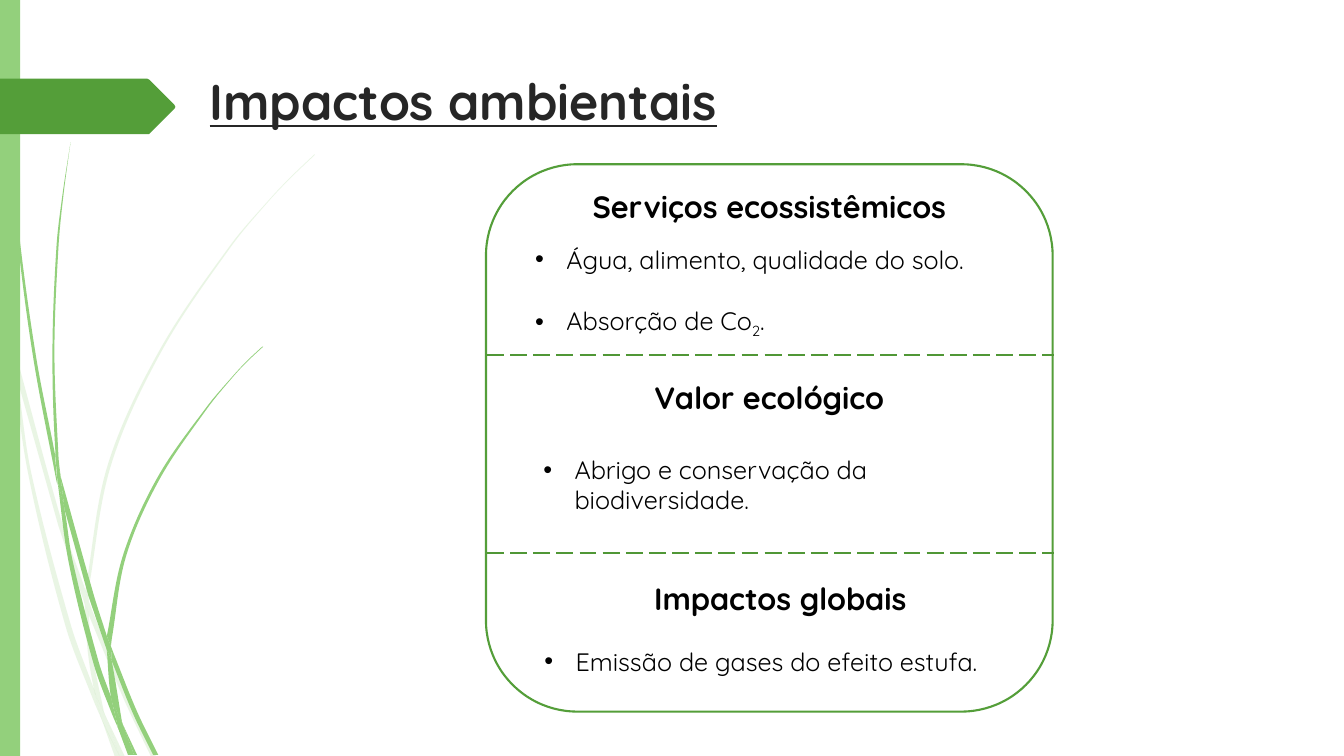
from dataclasses import dataclass
from math import dist

from lxml import etree
from pptx import Presentation, util as u
from pptx.dml.color import RGBColor
from pptx.enum import dml, shapes, text
from pptx.oxml.ns import qn


@dataclass(frozen=True)
class Theme:
    """Colours, font and type sizes of the slide."""
    font: str = "Quicksand"
    leaf: str = "93D07C"
    banner: str = "549E39"
    divider: str = "509736"
    title_ink: str = "262626"
    ink: str = "000000"
    title: int = 36
    heading: int = 22
    body: int = 18
    line: float = 1.5
    pale: int = 20


PALE_BLADES = [
    ([(0.11, 3.5), (0.09, 3.22), (0, 2.82)], [(0, 2.99), (0.1, 3.44)]),
    ([(0.58, 5.22), (0.84, 5.99)], [(0.85, 5.86), (0.62, 5.2), (0.14, 3.45)],
     [(0.17, 3.76), (0.58, 5.22)]),
    ([(0.92, 6.07), (0.88, 5.96)], [(0.88, 6.1), (1.23, 6.94), (1.5, 7.51)],
     [(1.55, 7.51), (1.27, 6.92), (0.92, 6.07)]),
    ([(1.19, 7.51), (1.24, 7.51)], [(1.05, 7.11)]),
    ([(0.93, 6.83), (0.7, 6.19), (0.31, 4.69), (0.17, 3.76), (0.11, 3.5)],
     [(0.11, 3.5), (0.28, 4.7), (0.65, 6.21), (0.92, 6.93), (1.01, 7.14)],
     [(0.99, 7.07), (0.93, 6.83)]),
    ([(0.84, 5.99), (0.87, 6.46), (0.93, 6.83), (0.96, 6.92), (1.05, 7.11)],
     [(1.03, 7.06), (0.91, 6.46), (0.88, 6.1), (0.88, 6.08)]),
    ([(0.88, 5.84), (1.1, 4.62), (1.6, 3.49), (2.29, 2.45), (2.68, 1.98),
      (2.9, 1.75), (3.12, 1.54)],
     [(3.12, 1.53), (2.89, 1.75), (2.68, 1.97), (2.28, 2.44), (1.58, 3.48),
      (1.07, 4.61), (0.85, 5.84), (0.85, 5.86)], [(0.88, 5.96)]),
    ([(1.01, 7.14), (1.14, 7.51)], [(1.19, 7.51)]),
    ([(0.88, 6.08), (0.88, 6.1)], [(0.88, 5.96), (0.85, 5.86)],
     [(0.84, 5.99)]),
    ([(0.96, 6.92), (0.93, 6.83)], [(0.99, 7.07), (1.01, 7.14), (1.19, 7.51)],
     [(1.19, 7.51), (1.05, 7.11)]),
]
BLADES = [
    ([(0.07, 1.1), (0.17, 2.33), (0.33, 3.55), (0.56, 4.77), (0.57, 4.81)],
     [(0.55, 4.57), (0.55, 4.53), (0.36, 3.55), (0.19, 2.32), (0.08, 1.09),
      (0.05, 0.48), (0.04, 0)], [(0.03, 0), (0.04, 0.48), (0.07, 1.1)]),
    ([(0.88, 5.92), (1.06, 6.45)], [(1.06, 6.31), (0.93, 5.9), (0.6, 4.72)],
     [(0.64, 5.05), (0.88, 5.92)]),
    ([(1.13, 6.49), (1.1, 6.41)], [(1.11, 6.56), (1.32, 7.08), (1.52, 7.49)],
     [(1.57, 7.49), (1.36, 7.06), (1.13, 6.49)]),
    ([(1.1, 6.91), (0.98, 6.57), (0.72, 5.56), (0.64, 5.05), (0.57, 4.77)],
     [(0.57, 4.77), (0.68, 5.57), (0.93, 6.59), (1.11, 7.08), (1.17, 7.22)],
     [(1.16, 7.17), (1.1, 6.91)]),
    ([(0.6, 4.72), (0.58, 4.53), (0.54, 3.49), (0.58, 2.45), (0.63, 1.93),
      (0.7, 1.41)],
     [(0.7, 1.41), (0.62, 1.93), (0.56, 2.45), (0.52, 3.49), (0.55, 4.49),
      (0.6, 4.72)]),
    ([(1.33, 7.49), (1.36, 7.49)], [(1.22, 7.19)]),
    ([(0.57, 4.77), (0.64, 5.05)], [(0.6, 4.72), (0.55, 4.49)],
     [(0.55, 4.53)]),
    ([(1.11, 6.33), (1.25, 5.52), (1.58, 4.76), (2.05, 4.06), (2.31, 3.74),
      (2.45, 3.59), (2.61, 3.44)],
     [(2.6, 3.44), (2.45, 3.58), (2.31, 3.73), (2.04, 4.05), (1.56, 4.74),
      (1.22, 5.51), (1.06, 6.31)], [(1.1, 6.41)]),
    ([(1.17, 7.22), (1.27, 7.49)], [(1.31, 7.49)]),
    ([(1.06, 6.45), (1.1, 6.91), (1.16, 7.06), (1.22, 7.19)],
     [(1.21, 7.16), (1.11, 6.56), (1.09, 6.51)]),
    ([(1.06, 6.45), (1.09, 6.51), (1.11, 6.56)], [(1.1, 6.41), (1.06, 6.31)]),
    ([(1.16, 7.06), (1.1, 6.91)], [(1.16, 7.17), (1.17, 7.22), (1.3, 7.49)],
     [(1.33, 7.49), (1.22, 7.19), (1.16, 7.06)]),
]
BANNER = [(0, 0.78), (1.46, 0.78), (1.48, 0.79), (1.73, 1.04), (1.74, 1.06),
          (1.73, 1.08), (1.48, 1.33), (1.46, 1.33), (0, 1.33)]


def handle(before, anchor, after, length):
    """Return the curve handle leaving an anchor along its tangent."""
    span = dist(before, after) or 1
    return [a + (q - p) / span * length / 3
            for p, a, q in zip(before, anchor, after)]


class Page:
    """Draws styled elements on one slide."""

    def __init__(self, slide, theme):
        self.shapes = slide.shapes
        self.theme = theme

    def paint(self, shape, fill=None, line=None):
        """Set fill and outline and drop the shadow."""
        shape.shadow.inherit = False
        if fill:
            shape.fill.solid()
            shape.fill.fore_color.rgb = RGBColor.from_string(fill)
        else:
            shape.fill.background()
        if line:
            shape.line.color.rgb = RGBColor.from_string(line)
            shape.line.width = u.Pt(self.theme.line)
        else:
            shape.line.fill.background()

    def polygon(self, points, fill):
        """Draw a filled outline through the points."""
        corners = [(u.Inches(x), u.Inches(y)) for x, y in points]
        builder = self.shapes.build_freeform(*corners[0], scale=1.0)
        builder.add_line_segments(corners[1:], close=True)
        shape = builder.convert_to_shape()
        self.paint(shape, fill)
        return shape

    def blade(self, edges, pale):
        """Draw a piece of grass whose edges bend smoothly."""
        shape = self.polygon(sum(edges, []), self.theme.leaf)
        steps = iter(list(shape._element.iter(qn("a:lnTo"))))
        for number, edge in enumerate(edges):
            if number:
                next(steps)
            ends = [edge[0], *edge, edge[-1]]
            for a, b, c, d in zip(ends, ends[1:], ends[2:], ends[3:]):
                step, length = next(steps), dist(b, c)
                step.tag = qn("a:cubicBezTo")
                handles = handle(a, b, c, length), handle(d, c, b, length)
                for place, (x, y) in enumerate(handles):
                    step.insert(place, step.makeelement(qn("a:pt"), {
                        "x": str(u.Inches(x) - shape.left),
                        "y": str(u.Inches(y) - shape.top)}))
        if pale:
            color = next(shape._element.spPr.iter(qn("a:srgbClr")))
            etree.SubElement(color, qn("a:alpha"), val=f"{self.theme.pale}000")

    def shape(self, kind, area, fill=None, line=None):
        """Draw a preset shape."""
        shape = self.shapes.add_shape(kind, *map(u.Inches, area))
        self.paint(shape, fill, line)
        return shape

    def divider(self, left, right, y):
        """Draw a dashed horizontal line."""
        line = self.shapes.add_connector(
            shapes.MSO_CONNECTOR.STRAIGHT, *map(u.Inches, (left, y, right, y)))
        line.line.color.rgb = RGBColor.from_string(self.theme.divider)
        line.line.width = u.Pt(self.theme.line)
        line.line.dash_style = dml.MSO_LINE.LONG_DASH
        etree.SubElement(line._element.spPr, qn("a:effectLst"))

    def span(self, para, words, size, color=None, bold=False):
        """Add one run to a paragraph."""
        font = para.add_run().font
        para.runs[-1].text = words
        font.name, font.size, font.bold = self.theme.font, u.Pt(size), bold
        font.color.rgb = RGBColor.from_string(color or self.theme.ink)
        return font

    def box(self, area):
        """Add a wrapping text box and return its frame."""
        frame = self.shapes.add_textbox(*map(u.Inches, area)).text_frame
        frame.word_wrap = True
        return frame

    def title(self, words, area):
        """Write the underlined title."""
        self.span(self.box(area).paragraphs[0], words, self.theme.title,
                  self.theme.title_ink, True).underline = True

    def heading(self, words, area):
        """Write a centred section heading."""
        frame = self.shape(shapes.MSO_SHAPE.ROUNDED_RECTANGLE, area).text_frame
        frame.vertical_anchor = text.MSO_ANCHOR.MIDDLE
        para = frame.paragraphs[0]
        para.alignment = text.PP_ALIGN.CENTER
        self.span(para, words, self.theme.heading, bold=True)

    def bullets(self, items, area):
        """Write bulleted items; every second part is a subscript."""
        frame = self.box(area)
        for index, item in enumerate(items):
            para = frame.add_paragraph() if index else frame.paragraphs[0]
            para.space_before = u.Pt(22 if index else 0)
            props = para._p.get_or_add_pPr()
            props.set("marL", str(u.Inches(0.31)))
            props.set("indent", str(u.Inches(-0.31)))
            etree.SubElement(props, qn("a:buFont"), typeface="Arial")
            etree.SubElement(props, qn("a:buChar"), char="•")
            for part, words in enumerate(item):
                font = self.span(para, words, self.theme.body)
                if part % 2:
                    font._element.set("baseline", "-25000")


def main():
    """Build and save the slide."""
    theme = Theme()
    deck = Presentation()
    deck.slide_width, deck.slide_height = u.Inches(13.33), u.Inches(7.5)
    page = Page(deck.slides.add_slide(deck.slide_layouts[6]), theme)
    for blades, pale in ((PALE_BLADES, True), (BLADES, False)):
        for edges in blades:
            page.blade(edges, pale)
    page.shape(shapes.MSO_SHAPE.RECTANGLE, (0, 0, 0.2, 7.5), theme.leaf)
    page.polygon(BANNER, theme.banner)
    page.title("Impactos ambientais", (1.98, 0.65, 9.75, 0.85))
    page.shape(shapes.MSO_SHAPE.ROUNDED_RECTANGLE, (4.82, 1.63, 5.62, 5.43),
               line=theme.banner)
    for y in (3.52, 5.49):
        page.divider(4.83, 10.45, y)
    sections = [
        ("Serviços ecossistêmicos", 4.82, 1.5, 5.21, 2.37, 1.01,
         [["Água, alimento, qualidade do solo."], ["Absorção de Co", "2", "."]]),
        ("Valor ecológico", 4.82, 3.4, 5.29, 4.46, 1.01,
         [["Abrigo e conservação da biodiversidade."]]),
        ("Impactos globais", 4.93, 5.39, 5.3, 6.36, 0.71,
         [["Emissão de gases do efeito estufa."]]),
    ]
    for words, left, top, list_left, list_top, height, items in sections:
        page.heading(words, (left, top, 5.62, 1.09))
        page.bullets(items, (list_left, list_top, 4.87, height))
    deck.save("out.pptx")


if __name__ == "__main__":
    main()
